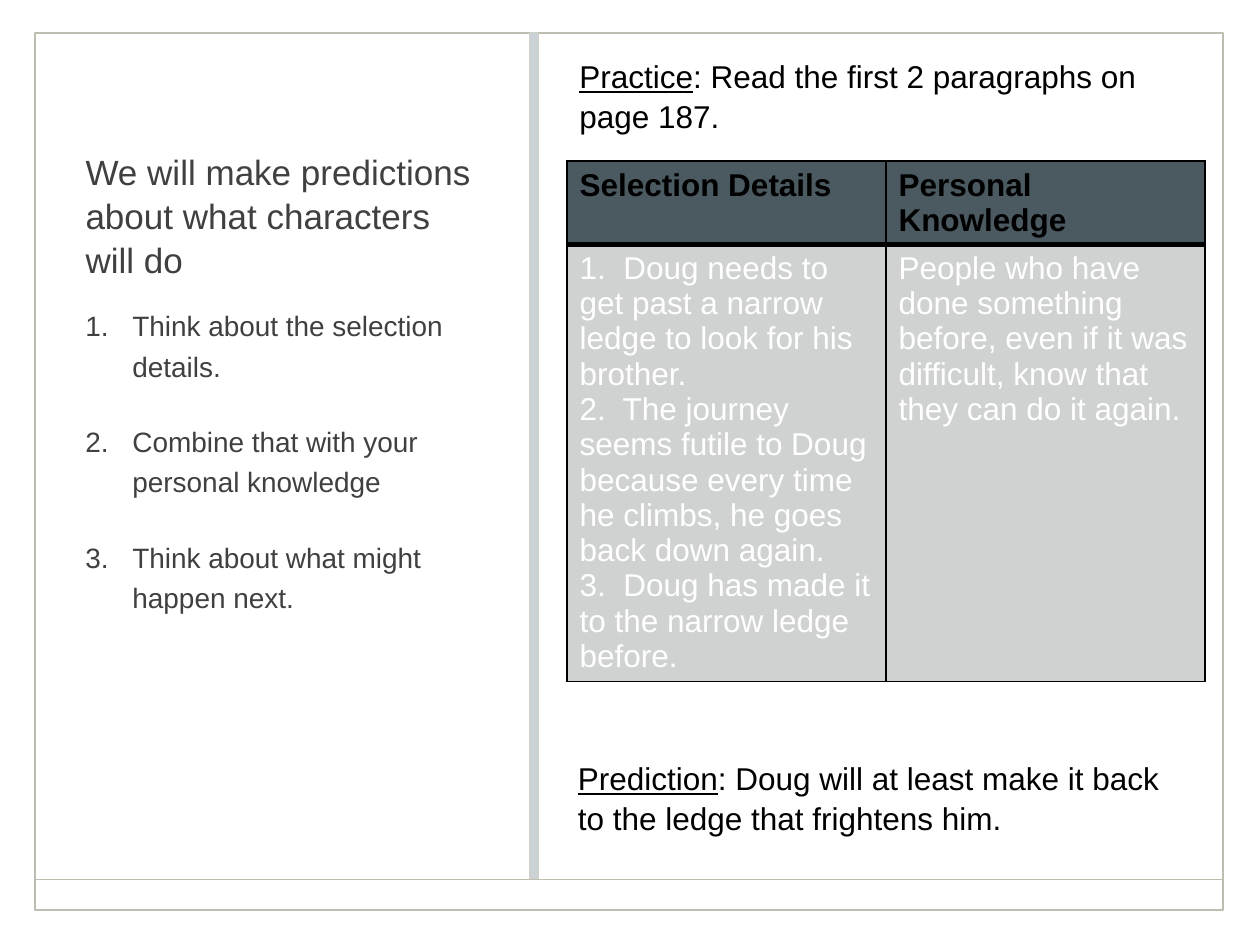
"""Build a reading lesson slide on predicting what characters will do."""
from dataclasses import dataclass

from lxml import etree
from pptx import Presentation
from pptx import util as u
from pptx.dml.color import RGBColor
from pptx.enum import shapes, text
from pptx.oxml import ns

FONT = "Arial"
BLACK, WHITE, GRAY = "000000", "FFFFFF", "404040"
FRAME, DIVIDER, DIVIDER_EDGE = "BEBDB2", "CBD2D5", "D1D0C8"
HEADER_FILL, BODY_FILL = "4B5A60", "D0D2D2"


@dataclass
class Box:
    left: float
    top: float
    width: float
    height: float

    def lengths(self) -> tuple:
        return tuple(u.Cm(n) for n in (self.left, self.top, self.width, self.height))


@dataclass
class Note:
    box: Box
    label: str
    message: str


@dataclass
class Row:
    height: float
    cells: list[list[str]]
    fill: str
    color: str
    bold: bool
    top_border: float
    bottom_border: float


STEPS = [
    "Think about the selection details.",
    "Combine that with your personal knowledge",
    "Think about what might happen next.",
]
NOTES = [
    Note(Box(11.43, 0.99, 11.91, 1.8), "Practice",
         ": Read the first 2 paragraphs on page 187."),
    Note(Box(11.4, 15.14, 12.85, 1.8), "Prediction",
         ": Doug will at least make it back to the ledge that frightens him."),
]
ROWS = [
    Row(1.68, [["Selection Details"], ["Personal Knowledge"]],
        HEADER_FILL, BLACK, True, 1, 3),
    Row(8.81, [
        ["1.  Doug needs to get past a narrow ledge to look for his brother.",
         "2.  The journey seems futile to Doug because every time he climbs, "
         "he goes back down again.",
         "3.  Doug has made it to the narrow ledge before."],
        ["People who have done something before, even if it was difficult, "
         "know that they can do it again."],
    ], BODY_FILL, WHITE, False, 3, 1),
]


def rgb(color: str) -> RGBColor:
    return RGBColor.from_string(color)


def format_runs(paragraph, size: float, color: str, bold: bool = False) -> None:
    for run in paragraph.runs:
        run.font.name = FONT
        run.font.size = u.Pt(size)
        run.font.bold = bold
        run.font.color.rgb = rgb(color)


def add_rectangle(slide, box: Box, line: str, width: float, fill: str | None = None) -> None:
    shape = slide.shapes.add_shape(shapes.MSO_SHAPE.RECTANGLE, *box.lengths())
    shape.shadow.inherit = False
    shape.line.color.rgb = rgb(line)
    shape.line.width = u.Pt(width)
    if fill:
        shape.fill.solid()
        shape.fill.fore_color.rgb = rgb(fill)
    else:
        shape.fill.background()


def add_footer_line(slide, left: float, right: float, top: float) -> None:
    line = slide.shapes.add_connector(
        shapes.MSO_CONNECTOR.STRAIGHT, u.Cm(left), u.Cm(top), u.Cm(right), u.Cm(top))
    line.line.color.rgb = rgb(FRAME)
    line.line.width = u.Pt(1)
    etree.SubElement(line._element.spPr, ns.qn("a:effectLst"))


def format_title(slide, box: Box, wording: str) -> None:
    title = slide.shapes.title
    title.left, title.top, title.width, title.height = box.lengths()
    frame = title.text_frame
    frame.text = wording
    frame.word_wrap = True
    frame.auto_size = text.MSO_AUTO_SIZE.NONE
    frame.vertical_anchor = text.MSO_ANCHOR.BOTTOM
    paragraph = frame.paragraphs[0]
    paragraph.alignment = text.PP_ALIGN.LEFT
    paragraph.line_spacing = 1.05
    format_runs(paragraph, 20, GRAY)


def add_steps(slide, box: Box, steps: list[str]) -> None:
    frame = slide.shapes.add_textbox(*box.lengths()).text_frame
    frame.word_wrap = True
    frame.text = "\n".join(steps)
    for index, paragraph in enumerate(frame.paragraphs):
        properties = paragraph._p.get_or_add_pPr()
        indent = u.Cm(0.95)
        properties.set("marL", str(indent))
        properties.set("indent", str(-indent))
        etree.SubElement(properties, ns.qn("a:buFont"), typeface=FONT)
        etree.SubElement(properties, ns.qn("a:buAutoNum"), type="arabicPeriod")
        paragraph.line_spacing = 1.2
        paragraph.space_before = u.Pt(20 if index else 0)
        format_runs(paragraph, 16, GRAY)


def add_note(slide, note: Note) -> None:
    frame = slide.shapes.add_textbox(*note.box.lengths()).text_frame
    frame.word_wrap = True
    frame.auto_size = text.MSO_AUTO_SIZE.SHAPE_TO_FIT_TEXT
    paragraph = frame.paragraphs[0]
    paragraph.line_spacing = 1.05
    label, message = paragraph.add_run(), paragraph.add_run()
    label.text, message.text = note.label, note.message
    label.font.underline = True
    format_runs(paragraph, 18, BLACK)


def add_borders(cell, row: Row) -> None:
    properties = cell._tc.get_or_add_tcPr()
    widths = {"lnL": 1, "lnR": 1, "lnT": row.top_border, "lnB": row.bottom_border}
    for side, width in widths.items():
        border = etree.SubElement(properties, ns.qn(f"a:{side}"), w=str(u.Pt(width)))
        fill = etree.SubElement(border, ns.qn("a:solidFill"))
        etree.SubElement(fill, ns.qn("a:srgbClr"), val=BLACK)


def add_details_table(slide, left: float, top: float, column: float, rows: list[Row]) -> None:
    columns = len(rows[0].cells)
    box = Box(left, top, column * columns, sum(row.height for row in rows))
    table = slide.shapes.add_table(len(rows), columns, *box.lengths()).table
    for row_index, row in enumerate(rows):
        table.rows[row_index].height = u.Cm(row.height)
        for column_index, lines in enumerate(row.cells):
            cell = table.cell(row_index, column_index)
            add_borders(cell, row)
            cell.fill.solid()
            cell.fill.fore_color.rgb = rgb(row.fill)
            cell.text_frame.text = "\n".join(lines)
            for paragraph in cell.text_frame.paragraphs:
                format_runs(paragraph, 18, row.color, row.bold)


def main() -> None:
    presentation = Presentation()
    presentation.slide_width, presentation.slide_height = u.Cm(25.4), u.Cm(19.05)
    slide = presentation.slides.add_slide(presentation.slide_layouts[5])
    add_rectangle(slide, Box(0.71, 0.66, 23.95, 17.68), FRAME, 1)
    add_footer_line(slide, 0.71, 24.66, 17.73)
    add_rectangle(slide, Box(10.67, 0.66, 0.18, 17.04), DIVIDER_EDGE, 0.25, DIVIDER)
    format_title(slide, Box(1.47, 3.25, 8.36, 2.54),
                 "We will make predictions about what characters will do")
    add_details_table(slide, 11.43, 3.25, 6.43, ROWS)
    add_steps(slide, Box(1.47, 5.97, 8.36, 9.07), STEPS)
    for note in NOTES:
        add_note(slide, note)
    presentation.save("out.pptx")


if __name__ == "__main__":
    main()
